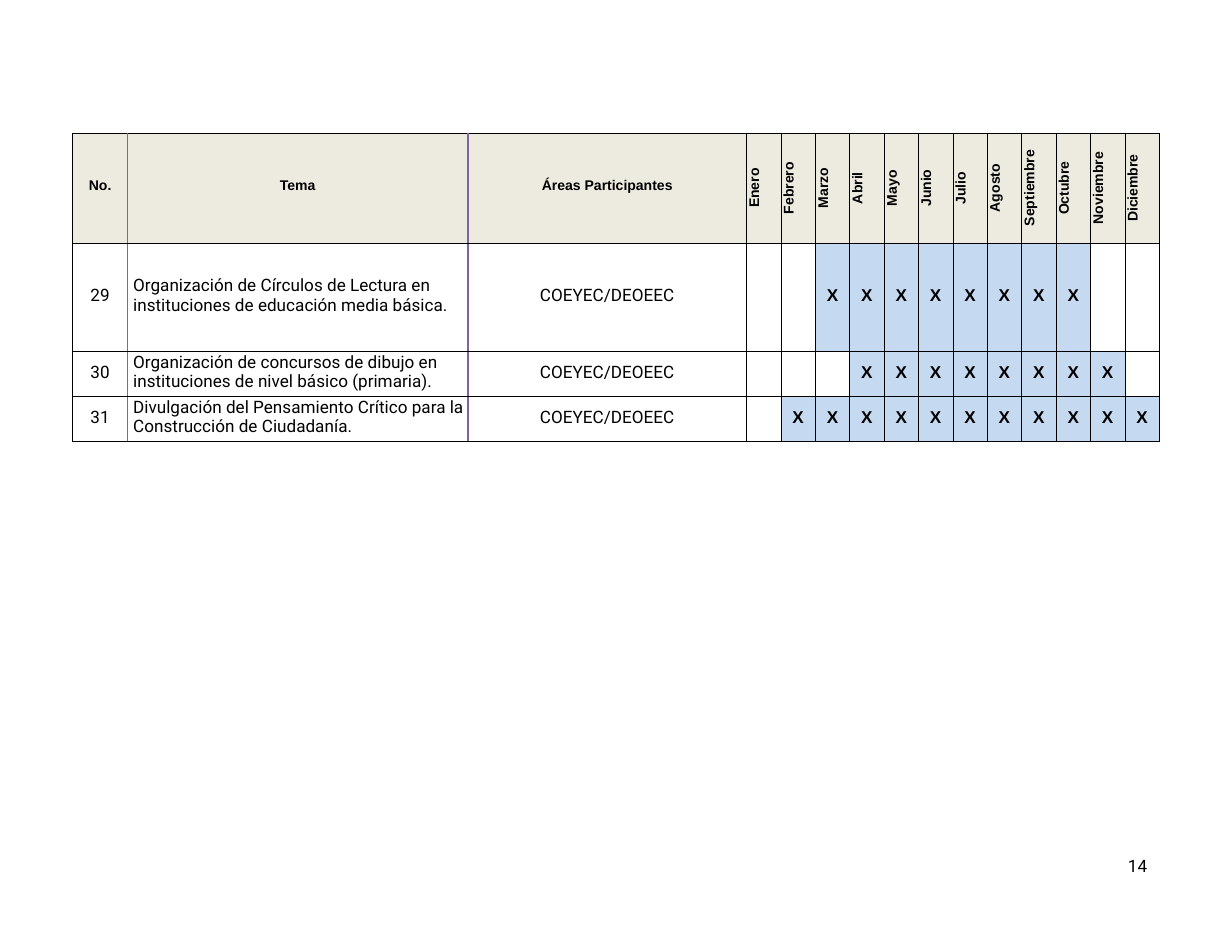
from dataclasses import dataclass

import pptx
import pptx.dml.color
import pptx.enum.text
import pptx.oxml
import pptx.oxml.ns
import pptx.util

Cm, Pt = pptx.util.Cm, pptx.util.Pt
RGB = pptx.dml.color.RGBColor
CENTER, LEFT = pptx.enum.text.PP_ALIGN.CENTER, pptx.enum.text.PP_ALIGN.LEFT


@dataclass(frozen=True)
class Theme:
    """Colours, fonts and type sizes of the slide."""
    ink: str = "000000"
    rule: str = "8063A1"
    header: str = "EDEBE0"
    active: str = "C5D9F0"
    head_font: str = "Arial"
    body_font: str = "Roboto"
    head_size: float = 9
    body_size: float = 11


THEME = Theme()
HEAD = {"name": THEME.head_font, "size": Pt(THEME.head_size), "bold": True}
BODY = {"name": THEME.body_font, "size": Pt(THEME.body_size), "bold": False}
MARK = {"name": THEME.head_font, "size": Pt(THEME.body_size), "bold": True}

MONTHS = ["Enero", "Febrero", "Marzo", "Abril", "Mayo", "Junio", "Julio",
          "Agosto", "Septiembre", "Octubre", "Noviembre", "Diciembre"]
TITLES = ["No.", "Tema", "Áreas Participantes"]
TOPICS = [
    ("29", "Organización de Círculos de Lectura en instituciones de educación media básica.",
     "COEYEC/DEOEEC", range(3, 11)),
    ("30", "Organización de concursos de dibujo en instituciones de nivel básico (primaria).",
     "COEYEC/DEOEEC", range(4, 12)),
    ("31", "Divulgación del Pensamiento Crítico para la Construcción de Ciudadanía.",
     "COEYEC/DEOEEC", range(2, 13)),
]
COLUMNS = [1.24, 7.72, 6.32] + [0.78] * len(MONTHS)
ROWS = [2.49, 2.45, 1.02, 1.02]


def write(tf, text, style, align=CENTER, spacing=None):
    """Write one styled paragraph into a text frame."""
    p = tf.paragraphs[0]
    p.alignment = align
    p.line_spacing = spacing
    r = p.add_run()
    r.text = text
    for name, value in style.items():
        setattr(r.font, name, value)
    r.font.color.rgb = RGB.from_string(THEME.ink)


def draw_borders(cell, column):
    """Draw the four cell edges, tinted around the topic column."""
    tinted = {"L": column in (1, 2), "R": column in (0, 1)}
    for i, side in enumerate("LRTB"):
        tint = tinted.get(side, False)
        color, width = (THEME.rule, Pt(1)) if tint else (THEME.ink, Pt(0.5))
        line = pptx.oxml.parse_xml(
            f'<a:ln{side} {pptx.oxml.ns.nsdecls("a")} w="{width}"><a:solidFill>'
            f'<a:srgbClr val="{color}"/></a:solidFill></a:ln{side}>')
        cell._tc.get_or_add_tcPr().insert(i, line)


def format_cell(cell, column, fill=None, lift=0.06):
    """Set insets, anchor, fill and borders of a cell."""
    margins = {"margin_left": 0, "margin_right": 0, "margin_top": 0, "margin_bottom": Cm(lift)}
    for name, value in margins.items():
        setattr(cell, name, value)
    cell.vertical_anchor = pptx.enum.text.MSO_ANCHOR.MIDDLE
    if fill:
        cell.fill.solid()
        cell.fill.fore_color.rgb = RGB.from_string(fill)
    else:
        cell.fill.background()
    draw_borders(cell, column)


def fill_header(table):
    """Fill the heading row, with the months turned upright."""
    for column, title in enumerate(TITLES + MONTHS):
        cell = table.cell(0, column)
        upright = column >= len(TITLES)
        format_cell(cell, column, THEME.header, 0 if upright else 0.12)
        if upright:
            cell._tc.get_or_add_tcPr().set("vert", "vert270")
        write(cell.text_frame, title, HEAD)


def fill_topic(table, row, topic):
    """Fill one topic row and mark its active months."""
    number, subject, area, active = topic
    for column, text in enumerate((number, subject, area)):
        cell = table.cell(row, column)
        format_cell(cell, column)
        if column == 1:
            cell.margin_left = Cm(0.13)
            write(cell.text_frame, text, BODY, LEFT, Pt(12.7))
        else:
            write(cell.text_frame, text, BODY)
    for month in range(1, len(MONTHS) + 1):
        column = len(TITLES) + month - 1
        cell = table.cell(row, column)
        format_cell(cell, column, THEME.active if month in active else None)
        if month in active:
            write(cell.text_frame, "X", MARK)


def add_schedule(slide, left, top, width, height):
    """Place the yearly schedule table in the given box."""
    table = slide.shapes.add_table(len(ROWS), len(COLUMNS), left, top, width, height).table
    table.first_row = table.horz_banding = False
    for column, size in zip(table.columns, COLUMNS):
        column.width = Cm(size)
    for row, size in zip(table.rows, ROWS):
        row.height = Cm(size)
    fill_header(table)
    for row, topic in enumerate(TOPICS, 1):
        fill_topic(table, row, topic)


def add_page_number(slide, left, top, width, height):
    """Place the page number in the given box."""
    tf = slide.shapes.add_textbox(left, top, width, height).text_frame
    tf.word_wrap = True
    for side in ("left", "right", "top", "bottom"):
        setattr(tf, f"margin_{side}", 0)
    write(tf, "14", BODY)


def main():
    """Build the slide and save it."""
    prs = pptx.Presentation()
    prs.slide_width, prs.slide_height = Cm(27.94), Cm(21.59)
    s = prs.slides.add_slide(prs.slide_layouts[6])
    add_schedule(s, Cm(1.65), Cm(3.02), Cm(sum(COLUMNS)), Cm(sum(ROWS)))
    add_page_number(s, Cm(25.48), Cm(19.41), Cm(0.64), Cm(0.5))
    prs.save("out.pptx")


if __name__ == "__main__":
    main()
